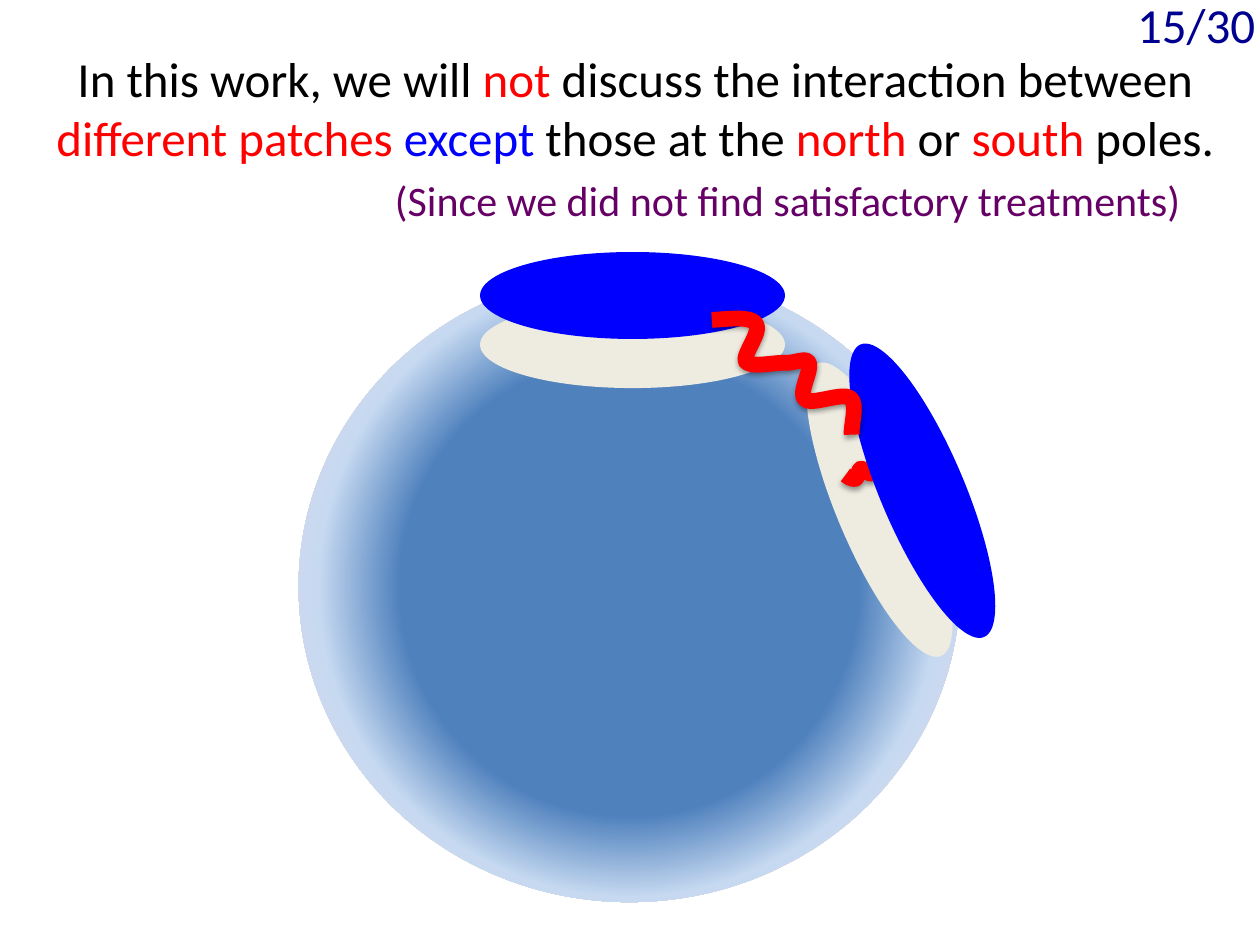
import pptx
import pptx.dml.color
import pptx.enum.shapes
import pptx.enum.text
import pptx.oxml
import pptx.oxml.ns
import pptx.util

CELL = pptx.util.Inches(0.1)  # grid of 100 columns by 75 rows
COLUMNS, ROWS = 100, 75

COLORS = {
    "black": "000000", "red": "FF0000", "blue": "0000FF", "navy": "000090",
    "purple": "660066", "cream": "EEECE1",
    "globe": "4F81BD", "haze": "C6D9F1", "rim": "F2DCDB",
}
ALIGN = pptx.enum.text.PP_ALIGN
TEXT_FRAME = {
    "word_wrap": True,
    "auto_size": pptx.enum.text.MSO_AUTO_SIZE.SHAPE_TO_FIT_TEXT,
}
NS = pptx.oxml.ns.nsdecls("a")
qn = pptx.oxml.ns.qn


def set_all(target, values):
    for attribute, value in values.items():
        setattr(target, attribute, value)


def rgb(color):
    return pptx.dml.color.RGBColor.from_string(COLORS[color])


def cells(*lengths):
    return [round(length * CELL) for length in lengths]


def within(box, part):
    """Move a part, given from the corner of its box, onto the grid."""
    return cells(box[0] + part[0], box[1] + part[1], *part[2:])


def add_text(slide, box, part, lines, size, align=ALIGN.CENTER, indent=1):
    frame = slide.shapes.add_textbox(*within(box, part)).text_frame
    set_all(frame, {**TEXT_FRAME, "margin_left": cells(indent)[0]})
    for number, line in enumerate(lines):
        paragraph = frame.add_paragraph() if number else frame.paragraphs[0]
        paragraph.alignment = align
        for words, color in line:
            run = paragraph.add_run()
            run.text = words
            set_all(run.font, {"name": "Calibri", "size": pptx.util.Pt(size)})
            run.font.color.rgb = rgb(color)


def add_ellipse(slide, box, part, color, rotation=0):
    ellipse = slide.shapes.add_shape(
        pptx.enum.shapes.MSO_SHAPE.OVAL, *within(box, part))
    ellipse.rotation = rotation
    ellipse.shadow.inherit = False
    ellipse.fill.solid()
    ellipse.fill.fore_color.rgb = rgb(color)
    ellipse.line.fill.background()
    return ellipse


def shade_radially(shape, stops):
    stop_xml = "".join(
        f'<a:gs pos="{percent * 1000}"><a:srgbClr val="{COLORS[color]}"/></a:gs>'
        for percent, color in stops)
    gradient = pptx.oxml.parse_xml(
        f'<a:gradFill {NS} rotWithShape="1"><a:gsLst>{stop_xml}</a:gsLst>'
        '<a:path path="circle"><a:fillToRect l="50000" t="50000" r="50000" '
        'b="50000"/></a:path></a:gradFill>')
    properties = shape.element.spPr
    properties.replace(properties.find(qn("a:solidFill")), gradient)


def bend_segments(freeform):
    """Join each three straight segments into one cubic curve."""
    segments = list(freeform.element.iter(qn("a:lnTo")))
    for first in range(0, len(segments), 3):
        curve = pptx.oxml.parse_xml(f"<a:cubicBezTo {NS}/>")
        segments[first].addprevious(curve)
        for segment in segments[first:first + 3]:
            curve.append(segment[0])
            segment.getparent().remove(segment)


def add_wave(slide, box, points):
    """Draw a red wave: a start, then two handles and an end for each curve."""
    start, *rest = [tuple(within(box, point)) for point in points]
    builder = slide.shapes.build_freeform(*start)
    builder.add_line_segments(rest, close=False)
    wave = builder.convert_to_shape()
    bend_segments(wave)
    wave.fill.background()
    wave.line.color.rgb = rgb("red")
    wave.line.width = pptx.util.Pt(9)
    wave.shadow.inherit = False
    effects = wave.element.spPr.find(qn("a:effectLst"))
    effects.append(pptx.oxml.parse_xml(
        f'<a:outerShdw {NS} blurRad="{pptx.util.Pt(3.1)}" dist="{pptx.util.Pt(1.6)}" '
        f'dir="5400000" rotWithShape="0"><a:srgbClr val="{COLORS["black"]}">'
        '<a:alpha val="38000"/></a:srgbClr></a:outerShdw>'))


def build_heading(slide, box):
    # Statement
    add_text(slide, box, (2.5, 3.35, 96.7, 10.4), [
        [("In this work, we will ", "black"), ("not", "red"),
         (" discuss the interaction between ", "black")],
        [("different patches ", "red"), ("except", "blue"),
         (" those at the ", "black"), ("north", "red"), (" or ", "black"),
         ("south", "red"), (" poles. ", "black")],
    ], 28)
    # Page count
    add_text(slide, box, (87.5, -0.9, 13.3, 5.7), [[("15/30", "navy")]], 28,
             ALIGN.LEFT, indent=2.75)
    # Reason
    add_text(slide, box, (26.65, 13.35, 72.5, 5), [
        [("(Since we did not find satisfactory treatments) ", "purple")]], 24)


def build_globe(slide, box):
    globe = add_ellipse(slide, box, (0, 1.5, 52.5, 50.1), "globe")
    shade_radially(globe, [(50, "globe"), (68, "haze"), (100, "rim")])

    # North pole patch over its footprint
    for top, color in ((3.9, "cream"), (0, "blue")):
        add_ellipse(slide, box, (14.4, top, 24.2, 6.9), color)

    # Side patch over its footprint, with the small wave between them
    add_ellipse(slide, box, (33.5, 17.1, 25.2, 6.7), "cream", 67.1)
    add_wave(slide, box, [
        (47.2, 16.2), (47.1, 16.6), (46.9, 17), (46.7, 17),
        (46.5, 17), (46.1, 16.4), (45.9, 16.5),
        (45.7, 16.5), (45.7, 16.9), (45.6, 17.1),
        (45.5, 17.3), (45.5, 17.6), (45.4, 17.6),
        (45.2, 17.6), (44.8, 17.1), (44.6, 17.2),
        (44.4, 17.3), (44.4, 18), (44.2, 18),
        (44, 18.1), (43.5, 17.8), (43.4, 17.7)])
    add_ellipse(slide, box, (36.9, 15.6, 25.2, 6.7), "blue", 67.1)

    # Interaction between the two patches
    add_wave(slide, box, [
        (32.8, 5.4), (34.3, 5.3), (35.9, 5.1), (36.3, 5.7),
        (36.8, 6.3), (35.2, 8.2), (35.5, 8.7),
        (35.9, 9.2), (37.6, 8.8), (38.5, 8.8),
        (39.3, 8.9), (40.3, 8.3), (40.5, 8.8),
        (40.8, 9.3), (39.6, 11.3), (40.2, 11.7),
        (40.7, 12.2), (43.2, 11.1), (43.8, 11.6),
        (44.4, 12), (43.8, 14), (43.9, 14.5)])


def main():
    deck = pptx.Presentation()
    deck.slide_width, deck.slide_height = cells(COLUMNS, ROWS)
    slide = deck.slides.add_slide(deck.slide_layouts[6])
    build_heading(slide, (0, 0))
    build_globe(slide, (23.7, 20))
    deck.save("out.pptx")


if __name__ == "__main__":
    main()
